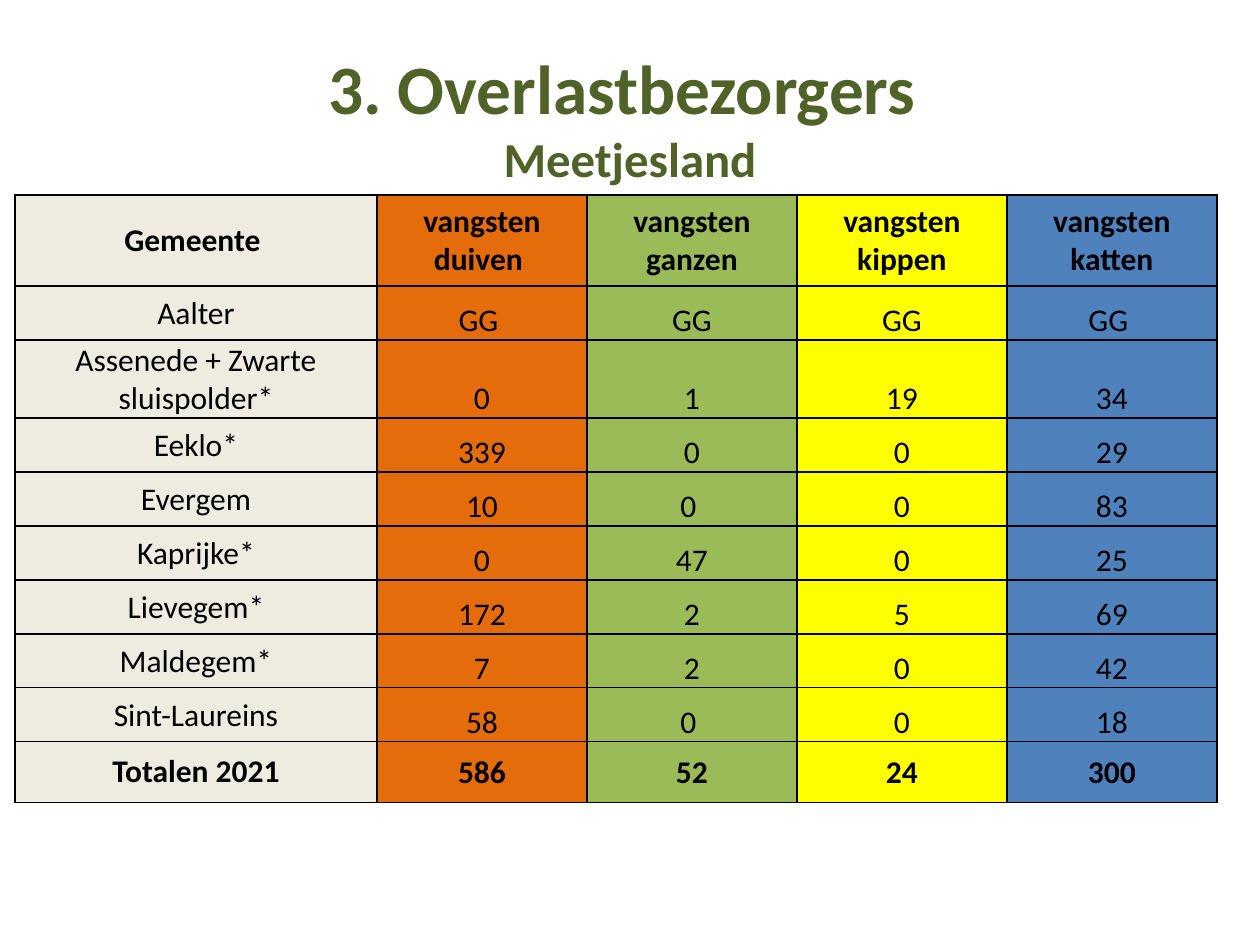
import pptx
import pptx.dml.color
import pptx.enum.text
import pptx.util
import lxml.etree

PX = 914400 / 126
COLORS = {
    "title": "4F6228",
    "text": "000000",
    "gemeente": "EEECE1",
    "duiven": "E46C0A",
    "ganzen": "9BBB59",
    "kippen": "FFFF00",
    "katten": "4F81BD",
}
COLUMN_FILLS = ["gemeente", "duiven", "ganzen", "kippen", "katten"]
COLUMN_WIDTHS = [362, 210, 210, 210, 210]
ROWS = [
    ["Gemeente ", "vangsten duiven ", "vangsten ganzen", "vangsten kippen", "vangsten katten"],
    ["Aalter", "GG ", "GG", "GG", "GG "],
    ["Assenede + Zwarte sluispolder*", "0", "1", "19", "34"],
    ["Eeklo*", "339", "0", "0", "29"],
    ["Evergem", "10", "0 ", "0", "83"],
    ["Kaprijke*", "0", "47", "0", "25"],
    ["Lievegem*", "172", "2", "5", "69"],
    ["Maldegem*", "7", "2", "0", "42"],
    ["Sint-Laureins", "58", "0 ", "0", "18"],
    ["Totalen 2021", "586", "52", "24", "300"],
]
ROW_HEIGHTS = [91] + [54] * 8 + [61]
MIDDLE = pptx.enum.text.MSO_ANCHOR.MIDDLE
BOTTOM = pptx.enum.text.MSO_ANCHOR.BOTTOM


def px(*lengths):
    return [pptx.util.Emu(round(length * PX)) for length in lengths]


def write(para, text, size=18, bold=False, color="text"):
    para.alignment = pptx.enum.text.PP_ALIGN.CENTER
    span = para.add_run()
    span.text = text
    span.font.name = "Calibri"
    span.font.size = pptx.util.Pt(size)
    span.font.bold = bold
    span.font.color.rgb = pptx.dml.color.RGBColor.from_string(COLORS[color])


deck = pptx.Presentation()
deck.slide_width, deck.slide_height = px(1260, 945)
page = deck.slides.add_slide(deck.slide_layouts[5])

title = page.shapes.title
title.left, title.top, title.width, title.height = px(63, 38, 1134, 157)
frame = title.text_frame
frame.word_wrap = True
frame.auto_size = pptx.enum.text.MSO_AUTO_SIZE.NONE
frame.vertical_anchor = MIDDLE
para = frame.paragraphs[0]
write(para, "3. Overlastbezorgers ", size=39.6, bold=True, color="title")
para.add_line_break()
write(para, "Meetjesland", size=27.9, bold=True, color="title")

table = page.shapes.add_table(
    len(ROWS), len(COLUMN_WIDTHS), *px(15, 195, sum(COLUMN_WIDTHS), sum(ROW_HEIGHTS))
).table
for column, width in zip(table.columns, px(*COLUMN_WIDTHS)):
    column.width = width
for row, height in zip(table.rows, px(*ROW_HEIGHTS)):
    row.height = height

last = len(ROWS) - 1
for row_index, texts in enumerate(ROWS):
    strong = row_index in (0, last)
    for column_index, text in enumerate(texts):
        cell = table.cell(row_index, column_index)
        wide = row_index == 0 or (row_index == last and column_index == 0)
        side, top = (4, 0) if wide else (1, 1)
        cell.margin_left, cell.margin_top, cell.margin_right, cell.margin_bottom = px(side, top, side, 0)
        cell.vertical_anchor = MIDDLE if strong or column_index == 0 else BOTTOM
        write(cell.text_frame.paragraphs[0], text, bold=strong)

        properties = cell._tc.get_or_add_tcPr()
        for edge in ("lnL", "lnR", "lnT", "lnB"):
            line = lxml.etree.SubElement(properties, pptx.oxml.ns.qn(f"a:{edge}"), w="12700")
            fill = lxml.etree.SubElement(line, pptx.oxml.ns.qn("a:solidFill"))
            lxml.etree.SubElement(fill, pptx.oxml.ns.qn("a:srgbClr"), val=COLORS["text"])
        cell.fill.solid()
        cell.fill.fore_color.rgb = pptx.dml.color.RGBColor.from_string(COLORS[COLUMN_FILLS[column_index]])

deck.save("out.pptx")
